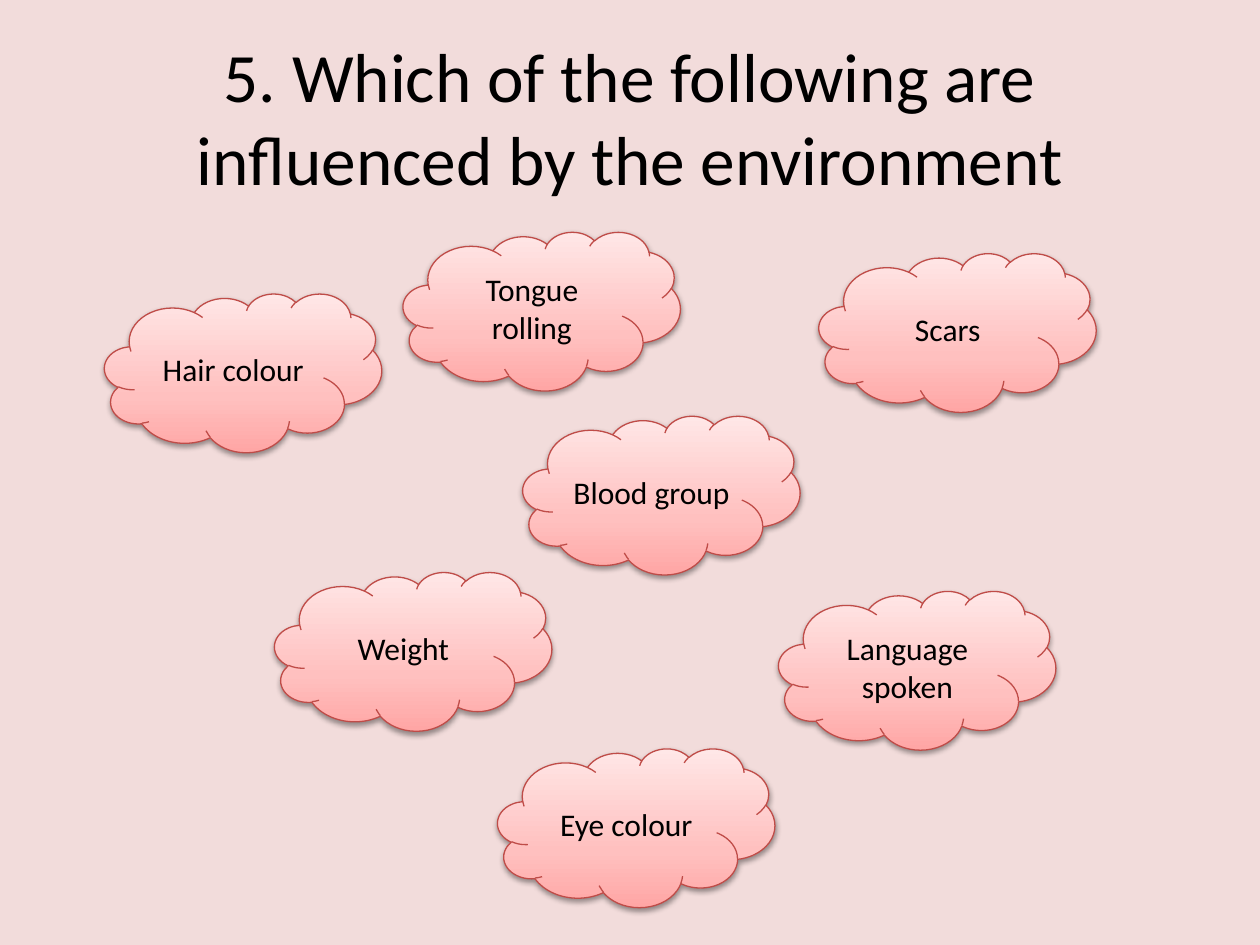
from copy import deepcopy
from typing import NamedTuple

from lxml import etree
from pptx import Presentation
from pptx.dml.color import RGBColor
from pptx.enum import shapes, text
from pptx.oxml import ns
from pptx.util import Inches, Pt

BACKGROUND = RGBColor(0xF2, 0xDC, 0xDB)
OUTLINE = RGBColor(0xBF, 0x4C, 0x48)
BLACK = RGBColor(0, 0, 0)
GRADIENT = (
    (0, RGBColor(0xFF, 0xA6, 0xA5)),
    (0.35, RGBColor(0xFF, 0xC0, 0xBF)),
    (1, RGBColor(0xFF, 0xE7, 0xE7)),
)
FONT = "Calibri"
CLOUD_WIDTH, CLOUD_HEIGHT = Inches(2.2), Inches(1.26)


class Trait(NamedTuple):
    label: str
    left: float
    top: float


TRAITS = (
    Trait("Hair colour", 0.83, 2.33),
    Trait("Language spoken", 6.18, 4.69),
    Trait("Weight", 2.18, 4.54),
    Trait("Blood group", 4.15, 3.3),
    Trait("Scars", 6.5, 2.01),
    Trait("Tongue rolling", 3.2, 1.84),
    Trait("Eye colour", 3.95, 5.94),
)


def write_centred(shape, wording: str, size: float) -> None:
    frame = shape.text_frame
    frame.word_wrap = True
    frame.vertical_anchor = text.MSO_ANCHOR.MIDDLE
    para = frame.paragraphs[0]
    para.text = wording
    para.alignment = text.PP_ALIGN.CENTER
    para.font.name = FONT
    para.font.size = Pt(size)
    para.font.color.rgb = BLACK


def fill_gradient(shape) -> None:
    """Fill from dark at the bottom to light at the top."""
    shape.fill.gradient()
    shape.fill.gradient_angle = 90
    stop_list = shape._element.spPr.find(".//" + ns.qn("a:gsLst"))
    stop_list.append(deepcopy(stop_list[0]))
    for stop, (position, colour) in zip(shape.fill.gradient_stops, GRADIENT):
        stop.position = position
        stop.color.rgb = colour


def add_soft_shadow(shape) -> None:
    shape.shadow.inherit = False
    effects = shape._element.spPr.find(ns.qn("a:effectLst"))
    shadow = etree.SubElement(
        effects, ns.qn("a:outerShdw"), blurRad=str(Pt(3.1)),
        dist=str(Pt(1.6)), dir="5400000", rotWithShape="0")
    colour = etree.SubElement(shadow, ns.qn("a:srgbClr"), val=str(BLACK))
    etree.SubElement(colour, ns.qn("a:alpha"), val="38000")


def add_cloud(page, trait: Trait) -> None:
    cloud = page.shapes.add_shape(
        shapes.MSO_SHAPE.CLOUD, Inches(trait.left), Inches(trait.top),
        CLOUD_WIDTH, CLOUD_HEIGHT)
    fill_gradient(cloud)
    cloud.line.color.rgb = OUTLINE
    cloud.line.width = Pt(0.75)
    add_soft_shadow(cloud)
    write_centred(cloud, trait.label, 18)


def main() -> None:
    deck = Presentation()
    deck.slide_width, deck.slide_height = Inches(10), Inches(7.5)
    page = deck.slides.add_slide(deck.slide_layouts[6])
    page.background.fill.solid()
    page.background.fill.fore_color.rgb = BACKGROUND

    title = page.shapes.add_textbox(
        Inches(0.5), Inches(0.3), Inches(9), Inches(1.25))
    write_centred(
        title, "5. Which of the following are influenced by the environment", 39.6)
    for trait in TRAITS:
        add_cloud(page, trait)
    deck.save("out.pptx")


if __name__ == "__main__":
    main()
